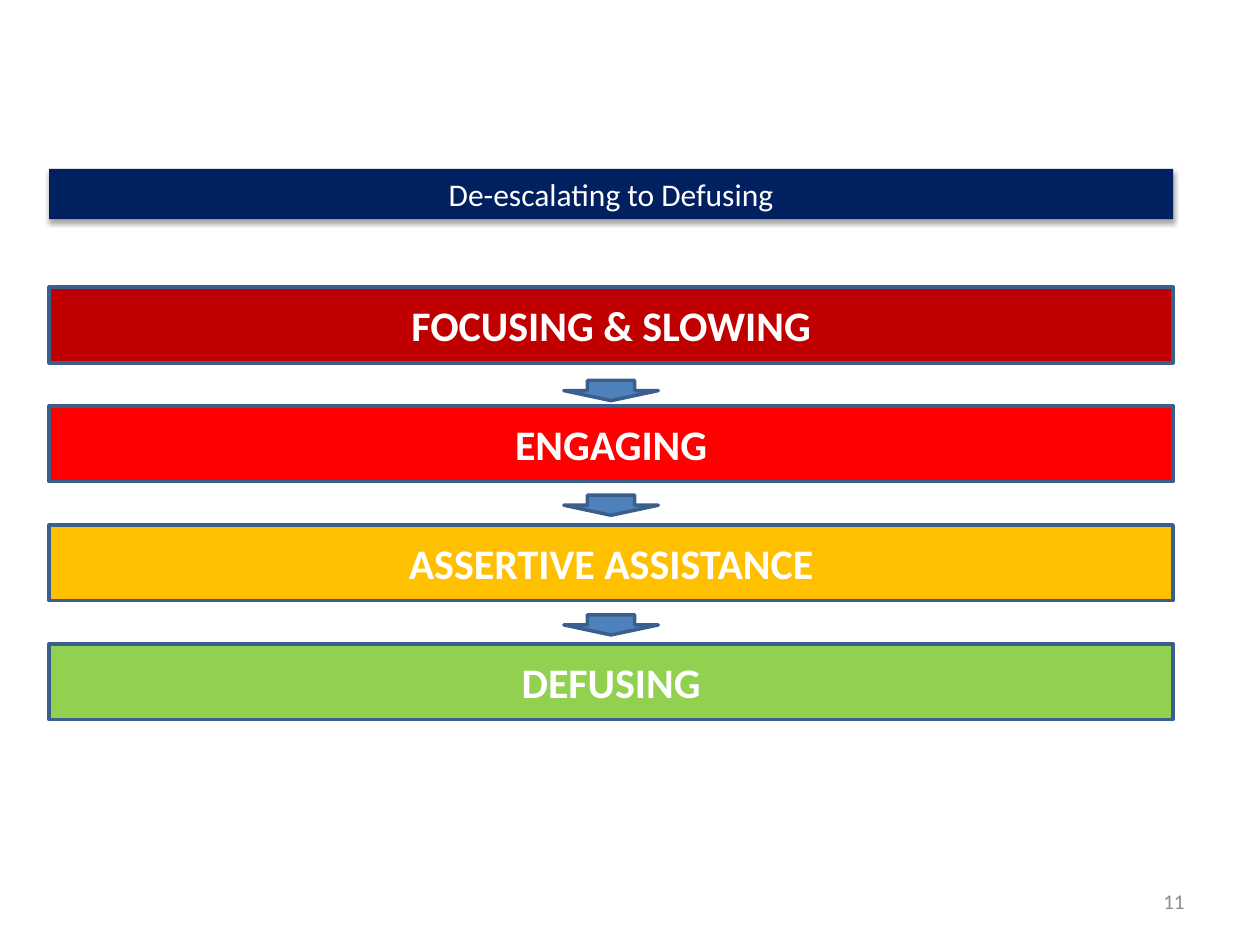
import dataclasses

import lxml.etree
import pptx
import pptx.dml.color
import pptx.enum.shapes
import pptx.enum.text
import pptx.oxml
import pptx.oxml.ns
import pptx.util

Inches = pptx.util.Inches
Pt = pptx.util.Pt
Kind = pptx.enum.shapes.MSO_SHAPE
Align = pptx.enum.text.PP_ALIGN
Anchor = pptx.enum.text.MSO_ANCHOR

HUES = {
    "navy": "002060", "dark": "C00000", "red": "FF0000", "gold": "FFC000",
    "green": "92D050", "blue": "4F81BD", "edge": "3A5F8C",
    "white": "FFFFFF", "gray": "8C8C8C", "black": "000000",
}
LEFT, WIDTH = 0.39, 8.92
TOP, LAST = 2.28, 5.11
BAR_H = 0.6
ARROW_W, ARROW_H = 0.75, 0.16
ARROW_TOPS = (3.02, 3.93, 4.88)


@dataclasses.dataclass
class Box:
    left: float
    top: float
    width: float
    height: float


@dataclasses.dataclass
class Step:
    label: str
    hue: str


STEPS = [
    Step("FOCUSING & SLOWING", "dark"),
    Step("ENGAGING", "red"),
    Step("ASSERTIVE ASSISTANCE", "gold"),
    Step("DEFUSING", "green"),
]


def rgb(hue: str) -> pptx.dml.color.RGBColor:
    return pptx.dml.color.RGBColor.from_string(HUES[hue])


def place(box: Box) -> list:
    return [Inches(n) for n in dataclasses.astuple(box)]


def add_form(slide, kind, box: Box, hue: str, edge: bool = True):
    form = slide.shapes.add_shape(kind, *place(box))
    form.shadow.inherit = False
    form.fill.solid()
    form.fill.fore_color.rgb = rgb(hue)
    if edge:
        form.line.color.rgb = rgb("edge")
        form.line.width = Pt(2)
    else:
        form.line.fill.background()
    return form


def write(form, text: str, size: int, hue: str, align=Align.CENTER,
          bold: bool = False) -> None:
    frame = form.text_frame
    frame.word_wrap = True
    frame.vertical_anchor = Anchor.MIDDLE
    para = frame.paragraphs[0]
    para.alignment = align
    run = para.add_run()
    run.text = text
    style = {"name": "Calibri", "size": Pt(size), "bold": bold}
    for key, value in style.items():
        setattr(run.font, key, value)
    run.font.color.rgb = rgb(hue)


def add_shade(form) -> None:
    """Cast a soft shadow straight down."""
    qn = pptx.oxml.ns.qn
    effects = form._element.spPr.find(qn("a:effectLst"))
    shade = lxml.etree.SubElement(
        effects, qn("a:outerShdw"), blurRad=str(Pt(3.1)),
        dist=str(Pt(1.8)), dir="5400000", rotWithShape="0")
    color = lxml.etree.SubElement(shade, qn("a:srgbClr"), val=HUES["black"])
    lxml.etree.SubElement(color, qn("a:alpha"), val="35000")


def main() -> None:
    deck = pptx.Presentation()
    deck.slide_width, deck.slide_height = Inches(10), Inches(7.5)
    slide = deck.slides.add_slide(deck.slide_layouts[6])

    # Step bars, evenly spaced
    pitch = (LAST - TOP) / (len(STEPS) - 1)
    for row, step in enumerate(STEPS):
        box = Box(LEFT, TOP + row * pitch, WIDTH, BAR_H)
        bar = add_form(slide, Kind.RECTANGLE, box, step.hue)
        write(bar, step.label, 24, "white", bold=True)

    # Arrows, centred between the bars
    mid = LEFT + (WIDTH - ARROW_W) / 2
    for top in ARROW_TOPS:
        add_form(slide, Kind.DOWN_ARROW, Box(mid, top, ARROW_W, ARROW_H), "blue")

    # Page number
    page = slide.shapes.add_textbox(*place(Box(7.17, 6.95, 2.33, 0.4)))
    write(page, "11", 12, "gray", Align.RIGHT)

    # Title band
    band = add_form(slide, Kind.RECTANGLE, Box(LEFT, 1.34, WIDTH, 0.4),
                    "navy", edge=False)
    write(band, "De-escalating to Defusing", 18, "white")
    add_shade(band)

    deck.save("out.pptx")


if __name__ == "__main__":
    main()
